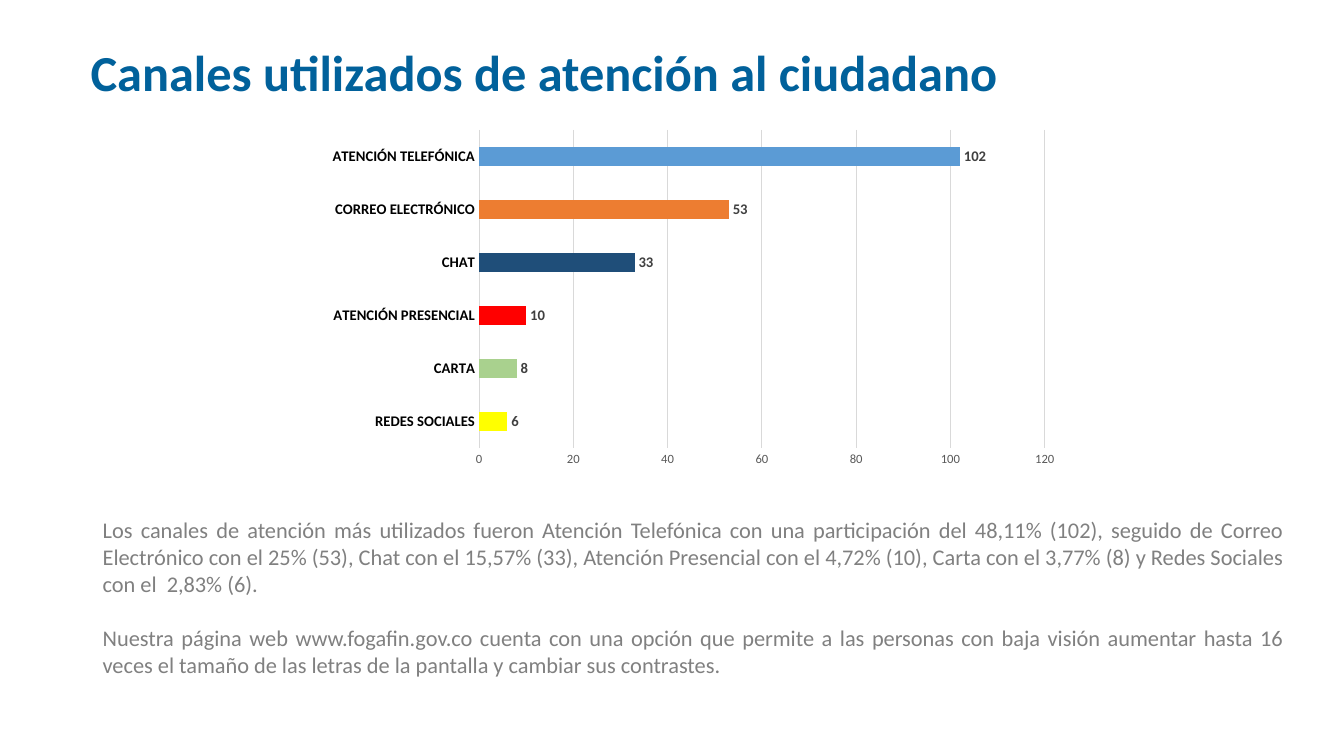
from dataclasses import dataclass

from pptx import Presentation
from pptx.chart.data import CategoryChartData
from pptx.dml.color import RGBColor
from pptx.enum.chart import XL_CHART_TYPE, XL_LABEL_POSITION, XL_TICK_MARK
from pptx.enum.text import MSO_ANCHOR, PP_ALIGN
from pptx.util import Pt

BAR_CLUSTERED = XL_CHART_TYPE.BAR_CLUSTERED
OUTSIDE_END = XL_LABEL_POSITION.OUTSIDE_END
NO_TICK = XL_TICK_MARK.NONE
TOP, MIDDLE = MSO_ANCHOR.TOP, MSO_ANCHOR.MIDDLE
LEFT, JUSTIFY = PP_ALIGN.LEFT, PP_ALIGN.JUSTIFY


@dataclass(frozen=True)
class Theme:
    font: str = "Calibri"
    heading: str = "01619B"
    body: str = "808080"
    category: str = "000000"
    scale: str = "595959"
    value: str = "404040"
    grid: str = "D9D9D9"
    bar: str = "5B9BD5"
    heading_size: float = 36
    body_size: float = 16
    chart_size: float = 10
    label_size: float = 10.5
    scale_size: float = 9
    line_width: float = 0.75


CHANNELS = [
    ("REDES SOCIALES", 6, "FFFF00"),
    ("CARTA", 8, "A9D18E"),
    ("ATENCIÓN PRESENCIAL", 10, "FF0000"),
    ("CHAT", 33, "1F4E79"),
    ("CORREO ELECTRÓNICO", 53, "ED7D31"),
    ("ATENCIÓN TELEFÓNICA", 102, Theme.bar),
]

HEADING = "Canales utilizados de atención al ciudadano"
FINDINGS = [
    "Los canales de atención más utilizados fueron Atención Telefónica con una "
    "participación del 48,11% (102), seguido de Correo Electrónico con el 25% (53), "
    "Chat con el 15,57% (33), Atención Presencial con el 4,72% (10), Carta con el "
    "3,77% (8) y Redes Sociales con el  2,83% (6).",
    "Nuestra página web www.fogafin.gov.co cuenta con una opción que permite a las "
    "personas con baja visión aumentar hasta 16 veces el tamaño de las letras de la "
    "pantalla y cambiar sus contrastes.",
]


class SlideBuilder:
    def __init__(self, slide, theme):
        self.slide = slide
        self.theme = theme

    def style_font(self, font, size, color, bold=False):
        font.name = self.theme.font
        font.size = Pt(size)
        font.bold = bold
        font.color.rgb = RGBColor.from_string(color)

    def style_line(self, line):
        line.color.rgb = RGBColor.from_string(self.theme.grid)
        line.width = Pt(self.theme.line_width)

    def text(self, box, paragraphs, size, color, bold=False, align=LEFT,
             anchor=TOP, line_spacing=1.0, gap=0):
        frame = self.slide.shapes.add_textbox(*map(Pt, box)).text_frame
        frame.word_wrap = True
        frame.vertical_anchor = anchor
        for index, wording in enumerate(paragraphs):
            paragraph = frame.add_paragraph() if index else frame.paragraphs[0]
            paragraph.alignment = align
            paragraph.line_spacing = line_spacing
            if index:
                paragraph.space_before = Pt(gap)
            run = paragraph.add_run()
            run.text = wording
            self.style_font(run.font, size, color, bold)

    def bar_chart(self, box, name, rows, maximum, step, gap_width):
        theme = self.theme
        data = CategoryChartData()
        data.categories = [category for category, _, _ in rows]
        data.add_series(name, [count for _, count, _ in rows])
        chart = self.slide.shapes.add_chart(BAR_CLUSTERED, *map(Pt, box), data).chart
        chart.has_legend = False
        chart.has_title = False
        self.style_font(chart.font, theme.chart_size, theme.category)

        categories = chart.category_axis
        categories.major_tick_mark = categories.minor_tick_mark = NO_TICK
        categories.has_major_gridlines = False
        self.style_line(categories.format.line)
        self.style_font(categories.tick_labels.font, theme.label_size, theme.category, True)

        scale = chart.value_axis
        scale.minimum_scale, scale.maximum_scale, scale.major_unit = 0, maximum, step
        scale.major_tick_mark = scale.minor_tick_mark = NO_TICK
        scale.has_major_gridlines = True
        self.style_line(scale.major_gridlines.format.line)
        scale.format.line.fill.background()
        self.style_font(scale.tick_labels.font, theme.scale_size, theme.scale)

        plot = chart.plots[0]
        plot.gap_width = gap_width
        plot.vary_by_categories = False
        plot.has_data_labels = True
        labels = plot.data_labels
        labels.show_value = True
        labels.position = OUTSIDE_END
        self.style_font(labels.font, theme.label_size, theme.value, True)

        series = plot.series[0]
        series.format.fill.solid()
        series.format.fill.fore_color.rgb = RGBColor.from_string(theme.bar)
        for index, (_, _, color) in enumerate(rows):
            fill = series.points[index].format.fill
            fill.solid()
            fill.fore_color.rgb = RGBColor.from_string(color)


def main():
    theme = Theme()
    deck = Presentation()
    deck.slide_width, deck.slide_height = Pt(960), Pt(540)
    builder = SlideBuilder(deck.slides.add_slide(deck.slide_layouts[6]), theme)
    builder.text((57.6, 14.4, 762.5, 78.5), [HEADING], theme.heading_size,
                 theme.heading, bold=True, anchor=MIDDLE, line_spacing=0.9)
    builder.text((66.24, 365, 858.24, 123.8), FINDINGS, theme.body_size,
                 theme.body, align=JUSTIFY, gap=19.5)
    builder.bar_chart((226.8, 87.84, 537.12, 250.56), "Canales", CHANNELS,
                      maximum=120, step=20, gap_width=182)
    deck.save("out.pptx")


if __name__ == "__main__":
    main()
